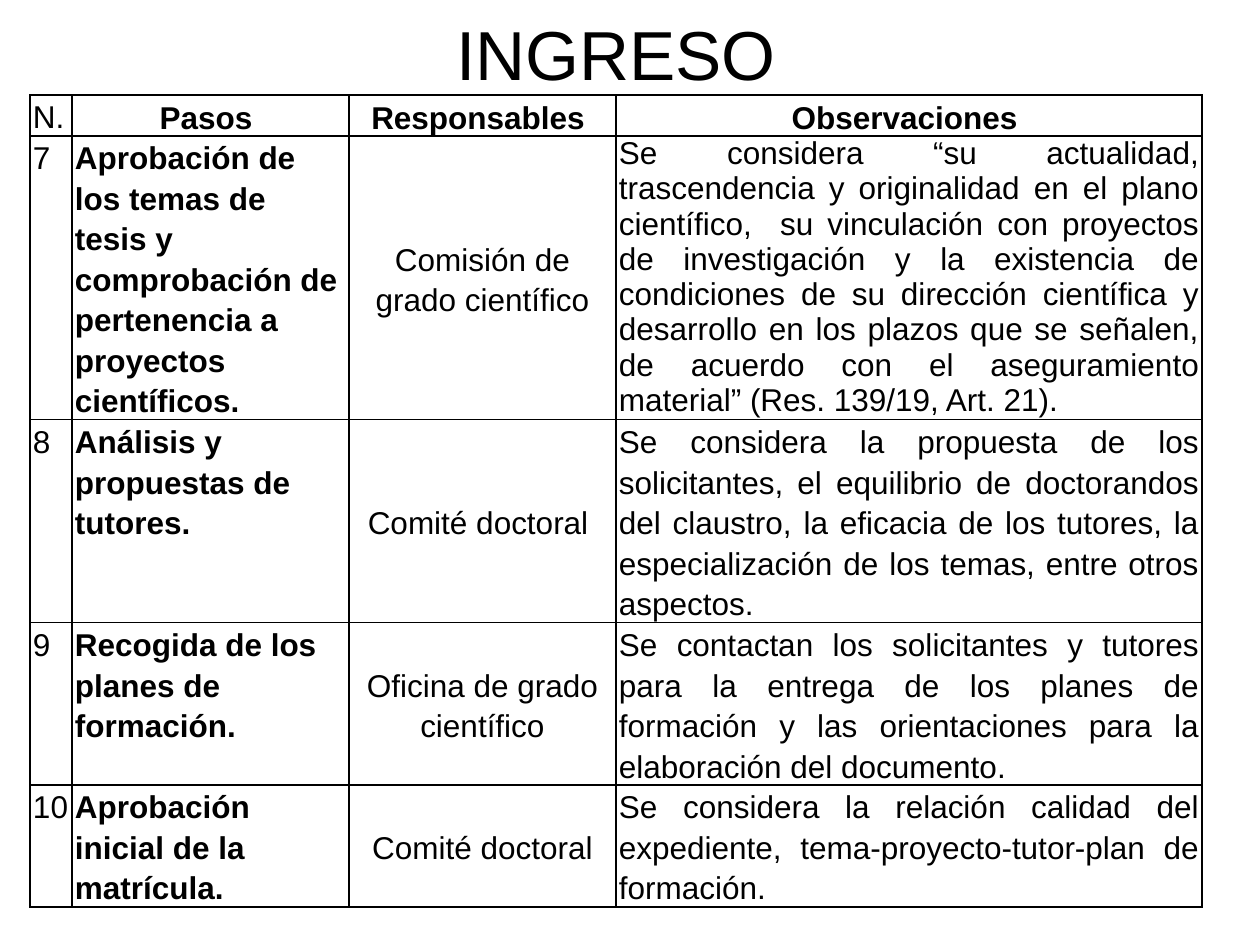
from lxml.etree import SubElement
from pptx import Presentation
from pptx.dml.color import RGBColor
from pptx.enum.text import MSO_ANCHOR as Anchor, MSO_AUTO_SIZE as Fit, PP_ALIGN as Align
from pptx.oxml.ns import qn
from pptx.util import Pt

BLACK = RGBColor(0x00, 0x00, 0x00)
PX = 914400 / 126

COLS = [42, 277, 267, 586]
ROWS = [41, 281, 203, 162, 122]
HEADS = ["N.", "Pasos ", "Responsables ", "Observaciones "]
STEPS = [
    ["7",
     "Aprobación de los temas de tesis y comprobación de pertenencia a proyectos científicos.",
     "Comisión de grado científico",
     "Se considera “su actualidad, trascendencia y originalidad en el plano científico,  "
     "su vinculación con proyectos de investigación y la existencia de condiciones de su "
     "dirección científica y desarrollo en los plazos que se señalen, de acuerdo con el "
     "aseguramiento material” (Res. 139/19, Art. 21)."],
    ["8",
     "Análisis y propuestas de tutores.",
     "Comité doctoral ",
     "Se considera la propuesta de los solicitantes, el equilibrio de doctorandos del "
     "claustro, la eficacia de los tutores, la especialización de los temas, entre otros "
     "aspectos. "],
    ["9",
     "Recogida de los planes de formación.",
     "Oficina de grado científico",
     "Se contactan los solicitantes y tutores para la entrega de los planes de formación "
     "y las orientaciones para la elaboración del documento. "],
    ["10",
     "Aprobación inicial de la matrícula.",
     "Comité doctoral",
     "Se considera la relación calidad del expediente, tema-proyecto-tutor-plan de "
     "formación."],
]


def px(n):
    return round(n * PX)


def write(frame, text, size=18, bold=False, align=Align.CENTER, gap=1.0):
    par = frame.paragraphs[0]
    par.alignment = align
    par.line_spacing = gap
    run = par.add_run()
    run.text = text
    font = run.font
    font.name = "Arial"
    font.size = Pt(size)
    font.bold = bold
    font.color.rgb = BLACK


def border(cell):
    props = cell._tc.get_or_add_tcPr()
    for i, side in enumerate(("lnL", "lnR", "lnT", "lnB")):
        line = props.makeelement(qn(f"a:{side}"), {"w": str(Pt(1))})
        fill = SubElement(line, qn("a:solidFill"))
        SubElement(fill, qn("a:srgbClr"), val=str(BLACK))
        props.insert(i, line)


def title(slide, x, y, w, h):
    head = slide.shapes.title
    head.left, head.top, head.width, head.height = map(px, (x, y, w, h))
    frame = head.text_frame
    frame.auto_size = Fit.NONE
    frame.vertical_anchor = Anchor.MIDDLE
    write(frame, "INGRESO", size=39.6)


def style(row, col):
    """Return the text format and anchor that suit a cell's place."""
    if col == 2 or (row == 0 and col > 0):
        return dict(bold=row == 0, gap=1.15), Anchor.MIDDLE
    if col == 1:
        return dict(bold=True, align=Align.LEFT, gap=1.15), Anchor.TOP
    gap = 1.0 if (row, col) == (1, 3) else 1.15
    return dict(align=Align.JUSTIFY, gap=gap), Anchor.TOP


def steps(slide, x, y):
    data = [HEADS] + STEPS
    box = map(px, (x, y, sum(COLS), sum(ROWS)))
    table = slide.shapes.add_table(len(ROWS), len(COLS), *box).table
    table.first_row = table.horz_banding = False
    for col, wide in zip(table.columns, COLS):
        col.width = px(wide)
    for r, (row, high) in enumerate(zip(table.rows, ROWS)):
        row.height = px(high)
        for c, cell in enumerate(row.cells):
            form, cell.vertical_anchor = style(r, c)
            cell.margin_left = cell.margin_right = px(3)
            cell.margin_top = cell.margin_bottom = 0
            cell.fill.background()
            border(cell)
            write(cell.text_frame, data[r][c], **form)


def main():
    deck = Presentation()
    deck.slide_width, deck.slide_height = px(1260), px(945)
    slide = deck.slides.add_slide(deck.slide_layouts[5])
    title(slide, 73, 26, 1086, 53)
    steps(slide, 30, 95)
    deck.save("out.pptx")


if __name__ == "__main__":
    main()
